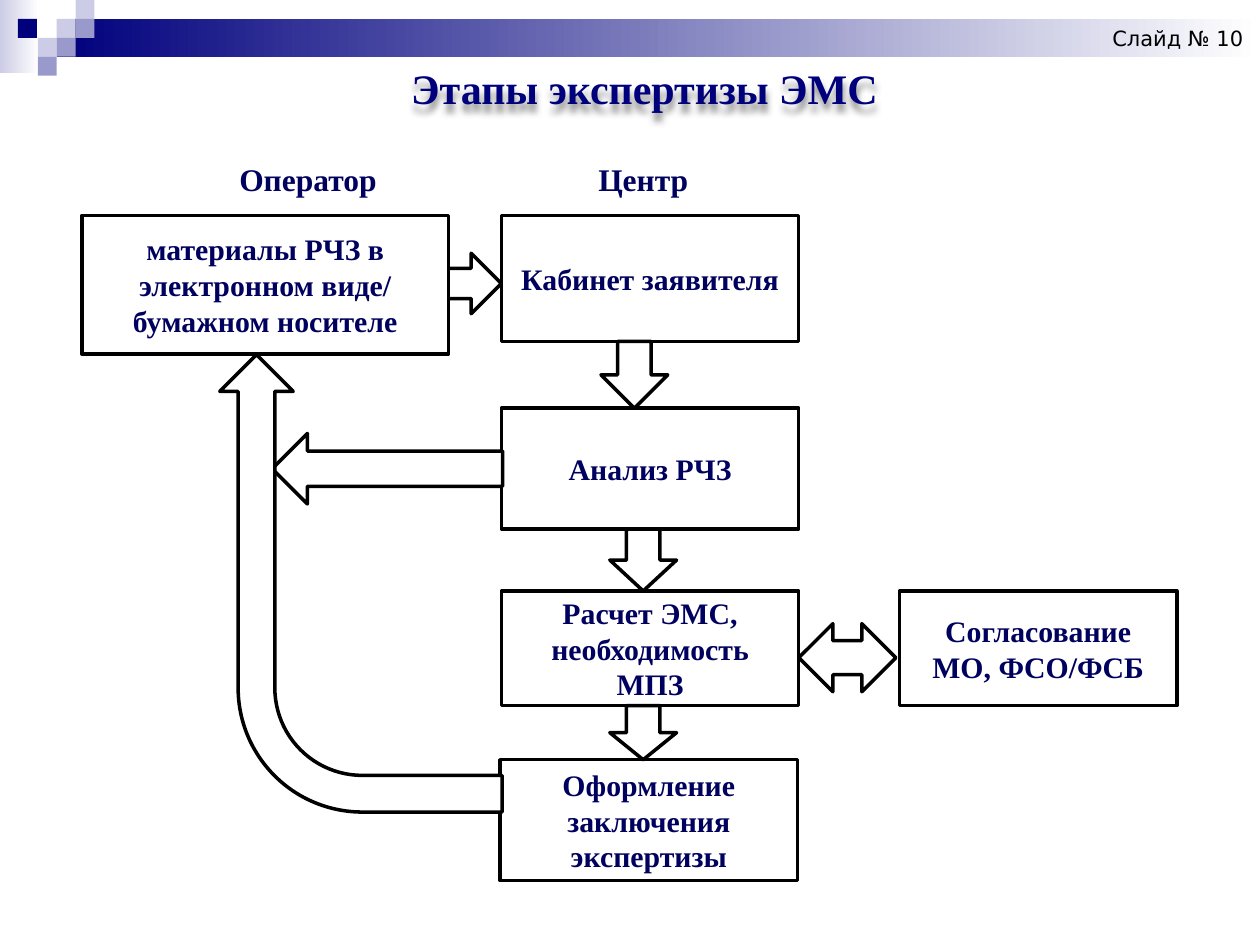
from pptx import Presentation
from pptx.dml.color import RGBColor
from pptx.enum.shapes import MSO_SHAPE as Shape
from pptx.enum.text import MSO_ANCHOR as Anchor, PP_ALIGN as Align
from pptx.oxml import parse_xml
from pptx.util import Inches, Pt

COLORS = {
    "navy": "00007D",
    "text": "00005E",
    "violet": "9999CC",
    "lilac": "CCCCE6",
    "white": "FFFFFF",
    "black": "000000",
}
SERIF, SANS = "Times New Roman", "DejaVu Sans"

BANDS = [
    ("lilac", (0, 0, 0.31, 0.58)),
    ("navy", (0.45, 0.15, 9.55, 0.3)),
]
TILE = 0.15
TILES = [
    ("lilac", 3, 1), ("lilac", 4, 0), ("violet", 4, 1), ("lilac", 2, 2),
    ("navy", 0.95, 1), ("violet", 3, 2), ("violet", 2, 3),
]

FLOW = [
    (Shape.RECTANGLE, (3.98, 1.71, 2.36, 1), ["Кабинет заявителя"]),
    (Shape.RIGHT_ARROW, (3.11, 2.01, 0.87, 0.48), []),
    (Shape.RECTANGLE, (0.65, 1.71, 2.91, 1.1),
     ["материалы РЧЗ в электронном виде/", "бумажном носителе"]),
    (Shape.DOWN_ARROW, (4.77, 2.71, 0.53, 0.53), []),
    (Shape.RECTANGLE, (3.97, 6.03, 2.36, 0.96), ["Оформление заключения экспертизы"]),
    (Shape.RECTANGLE, (3.98, 4.69, 2.36, 0.91), ["Расчет ЭМС, необходимость МПЗ"]),
    (Shape.DOWN_ARROW, (4.84, 4.2, 0.53, 0.49), []),
    (Shape.RECTANGLE, (7.14, 4.69, 2.2, 0.91), ["Согласование", "МО, ФСО/ФСБ"]),
    (Shape.LEFT_RIGHT_ARROW, (6.34, 4.95, 0.77, 0.54), []),
    (Shape.RECTANGLE, (3.98, 3.24, 2.36, 0.96), ["Анализ РЧЗ"]),
    (Shape.DOWN_ARROW, (4.84, 5.6, 0.53, 0.43), []),
    (Shape.LEFT_ARROW, (2.16, 3.44, 1.83, 0.56), []),
]
SIDE_MARGIN = 0.13
RETURN_ARROW = (1.05, 3.51, 3.63, 2.24)
RETURN_BENDS = (0.13, 0.13, 0.13, 0.44)

HEADINGS = [("Центр", (4.6, 1.22, 1.01, 0.4)), ("Оператор", (1.53, 1.22, 1.83, 0.4))]
TITLE = ("Этапы экспертизы ЭМС", (2.87, 0.45, 4.49, 0.61))
PAGE_LABEL = ("Слайд № 10", (8.73, 0.15, 1.27, 0.3))

TITLE_SHADOW = (
    '<a:effectLst xmlns:a="http://schemas.openxmlformats.org/drawingml/2006/main">'
    '<a:outerShdw blurRad="50800" dist="50800" dir="5400000" algn="t" rotWithShape="0">'
    '<a:srgbClr val="000000"><a:alpha val="43000"/></a:srgbClr>'
    '</a:outerShdw></a:effectLst>'
)


def color(name):
    return RGBColor.from_string(COLORS[name])


def add_shape(page, kind, place, fill, line=None):
    shape = page.shapes.add_shape(kind, *map(Inches, place))
    shape.shadow.inherit = False
    shape.fill.solid()
    shape.fill.fore_color.rgb = color(fill)
    if line:
        shape.line.color.rgb = color(line)
        shape.line.width = Pt(2)
    else:
        shape.line.fill.background()
    return shape


def write(frame, lines, size, ink="text", font=SERIF, bold=True, align=Align.CENTER):
    for index, line in enumerate(lines):
        para = frame.paragraphs[0] if index == 0 else frame.add_paragraph()
        para.text = line
        para.alignment = align
        para.font.name, para.font.size, para.font.bold = font, Pt(size), bold
        para.font.color.rgb = color(ink)


def add_text(page, text, place, size, wrap=True, **style):
    box = page.shapes.add_textbox(*map(Inches, place))
    box.text_frame.word_wrap = wrap
    write(box.text_frame, [text], size, **style)
    return box


def add_header(page):
    for name, place in BANDS:
        band = add_shape(page, Shape.RECTANGLE, place, name)
        band.fill.gradient()
        band.fill.gradient_angle = 0
        for stop, shade in zip(band.fill.gradient_stops, (name, "white")):
            stop.color.rgb = color(shade)
    for name, column, row in TILES:
        add_shape(page, Shape.RECTANGLE, (column * TILE, row * TILE, TILE, TILE), name)


def add_flow(page):
    for kind, place, lines in FLOW:
        shape = add_shape(page, kind, place, "white", "black")
        frame = shape.text_frame
        frame.word_wrap = True
        frame.vertical_anchor = Anchor.MIDDLE
        frame.margin_left = frame.margin_right = Inches(SIDE_MARGIN)
        write(frame, lines, 17)
    arrow = add_shape(page, Shape.BENT_ARROW, RETURN_ARROW, "white", "black")
    arrow.rotation = 270
    for index, bend in enumerate(RETURN_BENDS):
        arrow.adjustments[index] = bend


def main():
    deck = Presentation()
    deck.slide_width, deck.slide_height = Inches(10), Inches(7.5)
    page = deck.slides.add_slide(deck.slide_layouts[6])
    add_header(page)
    add_flow(page)
    for text, place in HEADINGS:
        add_text(page, text, place, 18)
    title = add_text(page, *TITLE, 24, ink="navy")
    title.element.spPr.append(parse_xml(TITLE_SHADOW))
    add_text(page, *PAGE_LABEL, 12, wrap=False, ink="black", font=SANS,
             bold=False, align=Align.LEFT)
    deck.save("out.pptx")


if __name__ == "__main__":
    main()
